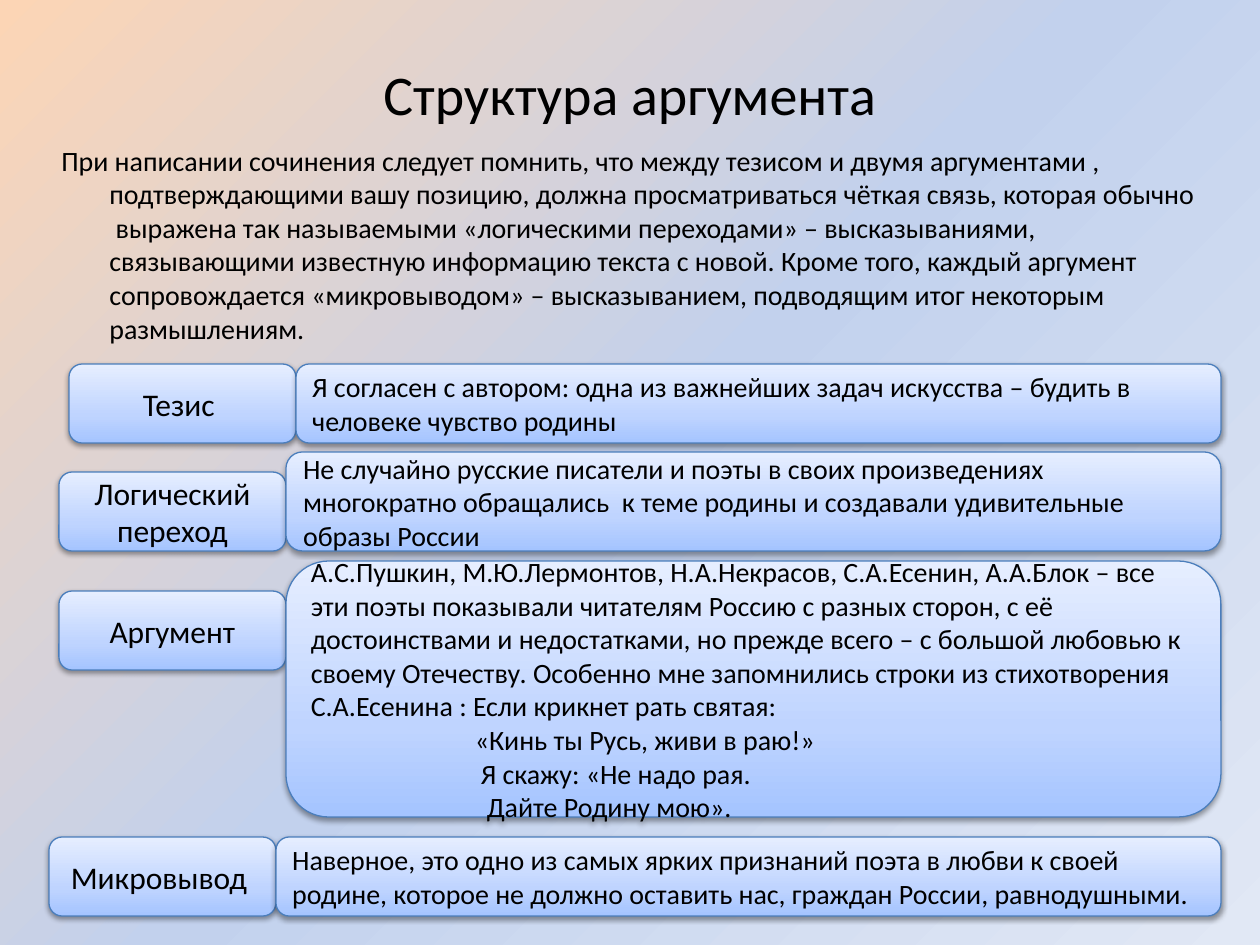
import copy
from dataclasses import dataclass

import pptx
import pptx.dml.color
import pptx.enum.shapes
import pptx.enum.text
import pptx.oxml
import pptx.oxml.ns
import pptx.util

ALIGN = pptx.enum.text.PP_ALIGN
ANCHOR = pptx.enum.text.MSO_ANCHOR
qn = pptx.oxml.ns.qn
EMU_PER_PX = 914400 / 126


def px(length):
    return pptx.util.Emu(round(length * EMU_PER_PX))


def rgb(value):
    return pptx.dml.color.RGBColor.from_string(value)


@dataclass(frozen=True)
class Theme:
    font: str = "Calibri"
    text: str = "000000"
    outline: str = "4B7EBC"
    background: tuple = ((0, "FCD5B5"), (0.5, "C2D1ED"), (1, "E1E8F5"))
    panel: tuple = ((0, "A4C4FF"), (0.35, "BFD4FF"), (1, "E6EEFF"))
    title_size: int = 32
    label_size: int = 18
    body_size: int = 16


SHADOW = (
    f'<a:outerShdw {pptx.oxml.ns.nsdecls("a")} blurRad="39370" dist="20320" dir="5400000" '
    'rotWithShape="0"><a:srgbClr val="000000"><a:alpha val="38000"/></a:srgbClr></a:outerShdw>'
)


class SlideBuilder:
    def __init__(self, presentation, theme):
        self.theme = theme
        self.slide = presentation.slides.add_slide(presentation.slide_layouts[5])
        self.gradient(self.slide.background.fill, self.slide.element, theme.background, 315)

    def gradient(self, fill, element, stops, angle):
        fill.gradient()
        fill.gradient_angle = angle
        stop_list = element.find(".//" + qn("a:gsLst"))
        stop_list.append(copy.deepcopy(stop_list[-1]))
        for stop, (position, color) in zip(fill.gradient_stops, stops):
            stop.position = position
            stop.color.rgb = rgb(color)

    def set_text(self, shape, text, size, align, anchor):
        frame = shape.text_frame
        frame.text = text
        frame.word_wrap = True
        frame.vertical_anchor = anchor
        for paragraph in frame.paragraphs:
            paragraph.alignment = align
            for run in paragraph.runs:
                run.font.name = self.theme.font
                run.font.size = pptx.util.Pt(size)
                run.font.color.rgb = rgb(self.theme.text)

    def indent(self, paragraph, margin, first_line=0):
        properties = paragraph._p.get_or_add_pPr()
        properties.set("marL", str(px(margin)))
        properties.set("indent", str(px(first_line)))

    def title(self, text, left, top, width, height):
        shape = self.slide.shapes.title
        shape.left, shape.top, shape.width, shape.height = map(px, (left, top, width, height))
        self.set_text(shape, text, self.theme.title_size, ALIGN.CENTER, ANCHOR.MIDDLE)

    def hanging_text(self, text, left, top, width, height, hang):
        shape = self.slide.shapes.add_textbox(*map(px, (left, top, width, height)))
        self.set_text(shape, text, self.theme.body_size, ALIGN.LEFT, ANCHOR.TOP)
        paragraph = shape.text_frame.paragraphs[0]
        paragraph.space_before = pptx.util.Pt(3)
        self.indent(paragraph, hang, -hang)

    def panel(self, text, left, top, width, height, size, align):
        shape = self.slide.shapes.add_shape(
            pptx.enum.shapes.MSO_SHAPE.ROUNDED_RECTANGLE, *map(px, (left, top, width, height))
        )
        self.gradient(shape.fill, shape.element, self.theme.panel, 90)
        shape.line.color.rgb = rgb(self.theme.outline)
        shape.line.width = pptx.util.Pt(0.75)
        shape.shadow.inherit = False
        shape.element.spPr.find(qn("a:effectLst")).append(pptx.oxml.parse_xml(SHADOW))
        self.set_text(shape, text, size, align, ANCHOR.MIDDLE)
        return shape

    def label(self, text, left, top):
        self.panel(text, left, top, LABEL_WIDTH, ROW_HEIGHT, self.theme.label_size, ALIGN.CENTER)

    def detail(self, text, label_left, top, height):
        left = label_left + LABEL_WIDTH
        shape = self.panel(
            text, left, top, RIGHT_EDGE - left, height, self.theme.body_size, ALIGN.LEFT
        )
        for number, verse in enumerate(shape.text_frame.paragraphs[1:]):
            self.indent(verse, VERSE_INDENT + number * VERSE_STEP)


LABEL_WIDTH = 227
ROW_HEIGHT = 79
RIGHT_EDGE = 1221
VERSE_INDENT = 164
VERSE_STEP = 6

INTRODUCTION = (
    "При написании сочинения следует помнить, что между тезисом и двумя аргументами , "
    "подтверждающими вашу позицию, должна просматриваться чёткая связь, которая обычно  "
    "выражена так называемыми «логическими переходами» – высказываниями, связывающими "
    "известную информацию текста с новой. Кроме того, каждый аргумент сопровождается "
    "«микровыводом» – высказыванием, подводящим итог некоторым размышлениям."
)
THESIS = (
    "Я согласен с автором: одна из важнейших задач искусства – будить в человеке чувство родины"
)
TRANSITION = (
    "Не случайно русские писатели и поэты в своих произведениях многократно обращались  "
    "к теме родины и создавали удивительные образы России"
)
ARGUMENT = (
    "А.С.Пушкин, М.Ю.Лермонтов, Н.А.Некрасов, С.А.Есенин, А.А.Блок – все эти поэты "
    "показывали читателям Россию с разных сторон, с её достоинствами и недостатками, "
    "но прежде всего – с большой любовью к своему Отечеству. Особенно мне запомнились "
    "строки из стихотворения С.А.Есенина : Если крикнет рать святая:\n"
    "«Кинь ты Русь, живи в раю!»\n"
    "Я скажу: «Не надо рая.\n"
    "Дайте Родину мою»."
)
CONCLUSION = (
    "Наверное, это одно из самых ярких признаний поэта в любви к своей родине, "
    "которое не должно оставить нас, граждан России, равнодушными."
)

ROWS = (
    ("Тезис ", 69, 364, THESIS, 364, ROW_HEIGHT),
    ("Логический переход", 59, 472, TRANSITION, 452, 99),
    ("Аргумент", 59, 591, ARGUMENT, 561, 256),
    ("Микровывод ", 49, 837, CONCLUSION, 837, ROW_HEIGHT),
)


def main():
    presentation = pptx.Presentation()
    presentation.slide_width = px(1260)
    presentation.slide_height = px(945)
    builder = SlideBuilder(presentation, Theme())
    builder.title("Структура аргумента", 63, 38, 1134, 110)
    builder.hanging_text(INTRODUCTION, 49, 137, 1162, 217, 48)
    for name, left, top, *_ in ROWS:
        builder.label(name, left, top)
    for _, left, _, text, top, height in ROWS:
        builder.detail(text, left, top, height)
    presentation.save("out.pptx")


if __name__ == "__main__":
    main()
